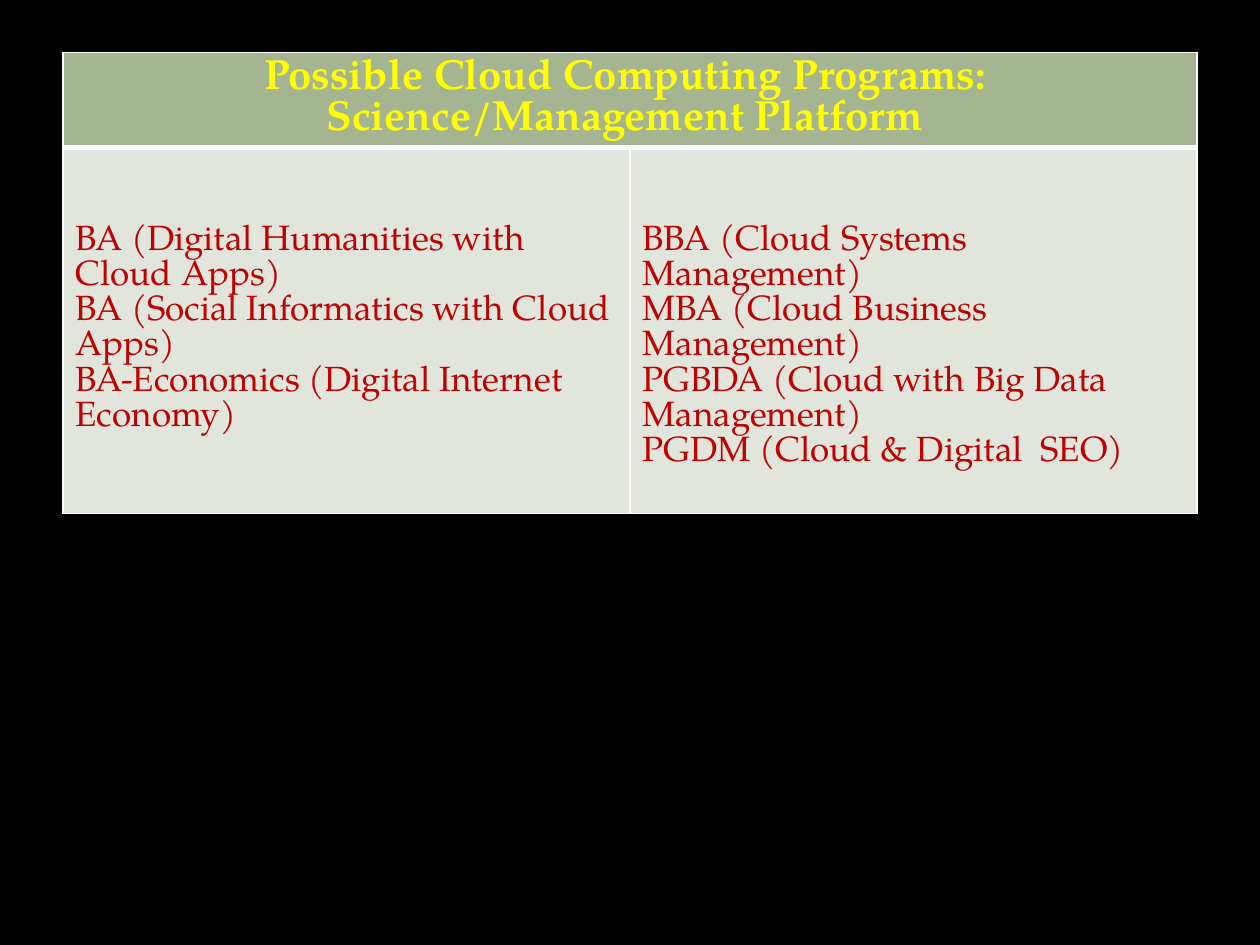
from dataclasses import dataclass

from lxml.etree import SubElement
from pptx import Presentation
from pptx.dml.color import RGBColor as Rgb
from pptx.enum.text import PP_ALIGN as Align
from pptx.oxml.ns import qn
from pptx.table import _Cell as Cell
from pptx.util import Pt

COLORS = {
    "page": "000000",
    "header": "A5B592",
    "body": "E1E5DC",
    "title": "FFFF00",
    "program": "C00000",
    "border": "FFFFFF",
}
FONT = "TeX Gyre Pagella"
COLUMN_WIDTH = 324
ROW_HEIGHTS = (54.4, 209)


@dataclass
class CellStyle:
    fill: str
    color: str
    size: float
    bold: bool
    align: Align
    top_margin: float
    bottom_border: float


HEADER = CellStyle("header", "title", 24, True, Align.CENTER, 3.6, 3)
BODY = CellStyle("body", "program", 20, False, Align.LEFT, 44, 1)

TITLE = ["Possible Cloud Computing Programs: ", "Science/Management Platform "]
PROGRAMS = [
    [
        "BA (Digital Humanities with Cloud Apps)",
        "BA (Social Informatics with Cloud Apps)",
        "BA-Economics (Digital Internet Economy)",
    ],
    [
        "BBA (Cloud Systems Management)",
        "MBA (Cloud Business Management)",
        "PGBDA (Cloud with Big Data Management)",
        "PGDM (Cloud & Digital  SEO)",
    ],
]


def set_borders(cell: Cell, bottom: float) -> None:
    """Draw white borders; they must come before the fill in the cell XML."""
    properties = cell._tc.get_or_add_tcPr()
    widths = {"a:lnL": 1, "a:lnR": 1, "a:lnT": 1, "a:lnB": bottom}
    for side, width in widths.items():
        line = SubElement(properties, qn(side), w=str(int(Pt(width))))
        fill = SubElement(line, qn("a:solidFill"))
        SubElement(fill, qn("a:srgbClr"), val=COLORS["border"])


def style_cell(cell: Cell, style: CellStyle) -> None:
    set_borders(cell, style.bottom_border)
    cell.fill.solid()
    cell.fill.fore_color.rgb = Rgb.from_string(COLORS[style.fill])
    cell.margin_top = Pt(style.top_margin)


def write_cell(cell: Cell, lines: list[str], style: CellStyle) -> None:
    cell.text_frame.text = "\n".join(lines)
    for para in cell.text_frame.paragraphs:
        para.alignment = style.align
        para.font.name = FONT
        para.font.size = Pt(style.size)
        para.font.bold = style.bold
        para.font.color.rgb = Rgb.from_string(COLORS[style.color])


def main() -> None:
    deck = Presentation()
    deck.slide_width, deck.slide_height = Pt(720), Pt(540)
    page = deck.slides.add_slide(deck.slide_layouts[6])
    page.background.fill.solid()
    page.background.fill.fore_color.rgb = Rgb.from_string(COLORS["page"])

    # Table grid
    frame = page.shapes.add_table(
        2, 2, Pt(36), Pt(30), Pt(2 * COLUMN_WIDTH), Pt(sum(ROW_HEIGHTS))
    )
    table = frame.table
    for column in table.columns:
        column.width = Pt(COLUMN_WIDTH)
    for row, height, style in zip(table.rows, ROW_HEIGHTS, (HEADER, BODY)):
        row.height = Pt(height)
        for cell in row.cells:
            style_cell(cell, style)

    # Heading across both columns, then the programs
    table.cell(0, 0).merge(table.cell(0, 1))
    write_cell(table.cell(0, 0), TITLE, HEADER)
    for index, programs in enumerate(PROGRAMS):
        write_cell(table.cell(1, index), programs, BODY)

    deck.save("out.pptx")


if __name__ == "__main__":
    main()
